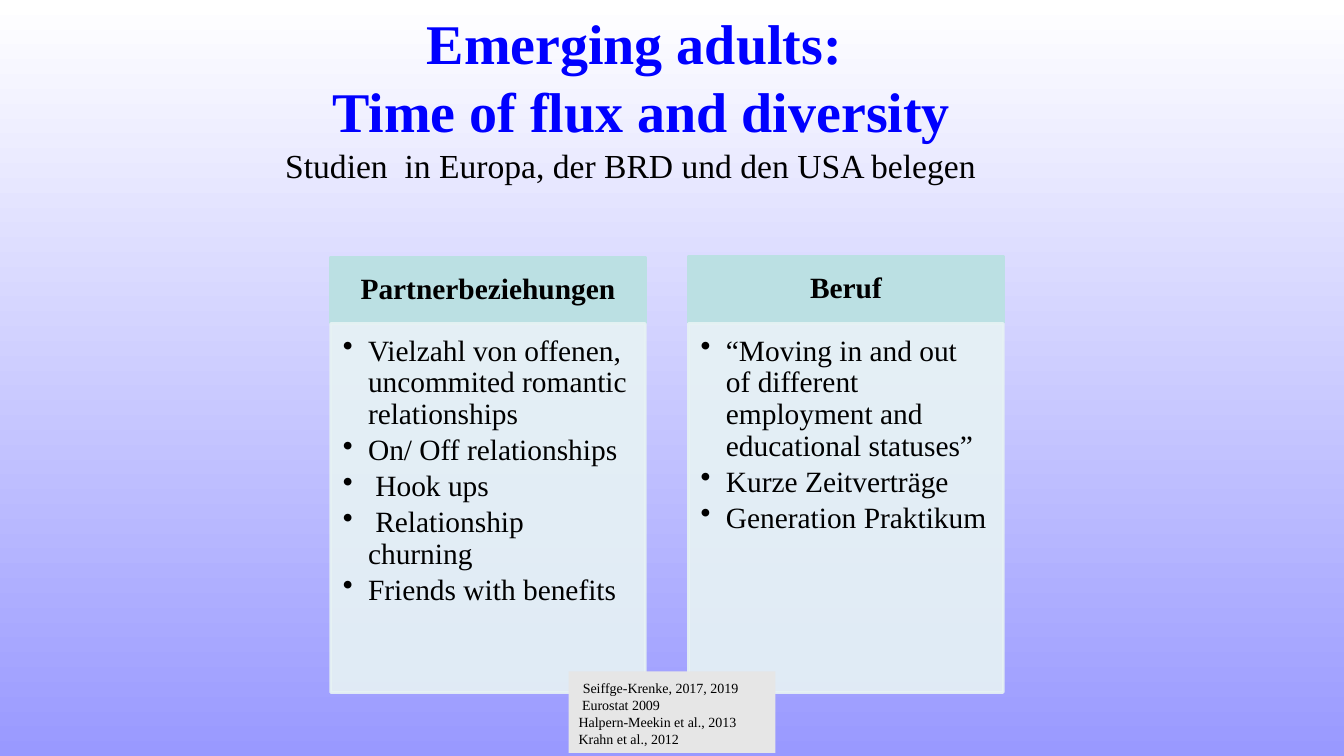
import pptx
import pptx.util
import pptx.dml.color
import pptx.enum.shapes
import pptx.enum.text
import pptx.oxml.ns
import lxml.etree
from dataclasses import dataclass

Inches, Pt = pptx.util.Inches, pptx.util.Pt
ALIGN, ANCHOR = pptx.enum.text.PP_ALIGN, pptx.enum.text.MSO_ANCHOR

# Content
HEADLINE = ["Emerging adults: ", "Time of flux and diversity"]
SUBTITLE = "Studien  in Europa, der BRD und den USA belegen"
TOPICS = [
    ("Partnerbeziehungen", 2.55, [
        "Vielzahl von offenen, uncommited romantic relationships",
        "On/ Off relationships",
        " Hook ups",
        " Relationship churning",
        "Friends with benefits",
    ]),
    ("Beruf", 2.54, [
        "“Moving in and out of different employment and educational statuses”",
        "Kurze Zeitverträge",
        "Generation Praktikum",
    ]),
]
CITATIONS = [
    [(" ", 12), ("Seiffge-Krenke, 2017, 2019", 10)],
    [(" Eurostat 2009", 10)],
    [("Halpern-Meekin et al., 2013", 10)],
    [("Krahn et al., 2012", 10)],
]


@dataclass(frozen=True)
class Theme:
    font: str = "Times New Roman"
    headline: str = "0000FF"
    text: str = "000000"
    sky_top: str = "FFFFFF"
    sky_bottom: str = "9999FF"
    header: str = "BBE0E3"
    body: str = "E7F3F4"
    sources: str = "E6E6E6"
    headline_size: int = 40
    subtitle_size: int = 24
    topic_size: int = 21


theme = Theme()

# Column geometry in inches
COLUMN_LEFT, COLUMN_STEP, COLUMN_WIDTH = 3.28, 3.55, 3.12
HEADER_HEIGHT, BODY_TOP, BODY_HEIGHT = 0.66, 3.21, 3.66


def rgb(code):
    return pptx.dml.color.RGBColor.from_string(code)


def add_run(paragraph, text, size, color=theme.text, bold=False):
    run = paragraph.add_run()
    run.text = text
    run.font.name = theme.font
    run.font.size = Pt(size)
    run.font.bold = bold
    run.font.color.rgb = rgb(color)


def next_paragraph(frame, index):
    return frame.add_paragraph() if index else frame.paragraphs[0]


def set_frame(frame, anchor, margins=(0.1, 0.05, 0.1, 0.05)):
    frame.word_wrap = True
    frame.auto_size = pptx.enum.text.MSO_AUTO_SIZE.NONE
    frame.vertical_anchor = anchor
    (frame.margin_left, frame.margin_top,
     frame.margin_right, frame.margin_bottom) = map(Inches, margins)


def add_panel(slide, box, fill, outlined=True, opacity=100):
    panel = slide.shapes.add_shape(
        pptx.enum.shapes.MSO_SHAPE.RECTANGLE, *map(Inches, box))
    panel.shadow.inherit = False
    panel.fill.solid()
    panel.fill.fore_color.rgb = rgb(fill)
    if outlined:
        panel.line.color.rgb = rgb(fill)
        panel.line.width = Pt(2)
    else:
        panel.line.fill.background()
    if opacity < 100:
        for color in panel.element.spPr.iter(pptx.oxml.ns.qn("a:srgbClr")):
            alpha = lxml.etree.SubElement(color, pptx.oxml.ns.qn("a:alpha"))
            alpha.set("val", str(opacity * 1000))
    return panel


def add_bullet(paragraph):
    properties = paragraph._p.get_or_add_pPr()
    properties.set("marL", str(Inches(0.25)))
    properties.set("indent", str(-Inches(0.25)))
    bullet = lxml.etree.SubElement(properties, pptx.oxml.ns.qn("a:buChar"))
    bullet.set("char", "•")


def add_topic(slide, left, top, name, points):
    header = add_panel(
        slide, (left, top, COLUMN_WIDTH, HEADER_HEIGHT), theme.header)
    set_frame(header.text_frame, ANCHOR.MIDDLE, (0.16, 0.09, 0.16, 0.09))
    heading = header.text_frame.paragraphs[0]
    heading.alignment = ALIGN.CENTER
    heading.line_spacing = 0.9
    add_run(heading, name, theme.topic_size, bold=True)

    body = add_panel(slide, (left, BODY_TOP, COLUMN_WIDTH, BODY_HEIGHT),
                     theme.body, opacity=90)
    set_frame(body.text_frame, ANCHOR.TOP, (0.12, 0.12, 0.16, 0.18))
    for index, point in enumerate(points):
        paragraph = next_paragraph(body.text_frame, index)
        add_bullet(paragraph)
        paragraph.alignment = ALIGN.LEFT
        paragraph.line_spacing = 0.9
        paragraph.space_after = Pt(3)
        add_run(paragraph, point, theme.topic_size)


def main():
    deck = pptx.Presentation()
    deck.slide_width, deck.slide_height = Inches(13.33), Inches(7.5)
    slide = deck.slides.add_slide(deck.slide_layouts[5])

    # Background
    sky = slide.background.fill
    sky.gradient()
    sky.gradient_angle = 270
    for stop, color, position in zip(
            sky.gradient_stops, (theme.sky_top, theme.sky_bottom), (0, 1)):
        stop.color.rgb = rgb(color)
        stop.position = position

    # Title
    title = slide.shapes.title
    title.left, title.top, title.width, title.height = map(
        Inches, (1.86, 0.13, 9, 1.25))
    set_frame(title.text_frame, ANCHOR.MIDDLE)
    headline = title.text_frame.paragraphs[0]
    headline.alignment = ALIGN.CENTER
    for index, line in enumerate(HEADLINE):
        if index:
            headline.add_line_break()
        add_run(headline, line, theme.headline_size, theme.headline, bold=True)

    # Topic columns
    for index, (name, top, points) in enumerate(TOPICS):
        add_topic(slide, COLUMN_LEFT + index * COLUMN_STEP, top, name, points)

    # Subtitle
    subtitle = slide.shapes.add_textbox(
        *map(Inches, (2.73, 1.39, 7.4, 0.51)))
    set_frame(subtitle.text_frame, ANCHOR.TOP)
    add_run(subtitle.text_frame.paragraphs[0], SUBTITLE, theme.subtitle_size)

    # Sources
    sources = add_panel(
        slide, (5.64, 6.66, 2.05, 0.81), theme.sources, outlined=False)
    set_frame(sources.text_frame, ANCHOR.TOP)
    for index, citation in enumerate(CITATIONS):
        paragraph = next_paragraph(sources.text_frame, index)
        paragraph.alignment = ALIGN.LEFT
        for text, size in citation:
            add_run(paragraph, text, size)

    deck.save("out.pptx")


if __name__ == "__main__":
    main()
